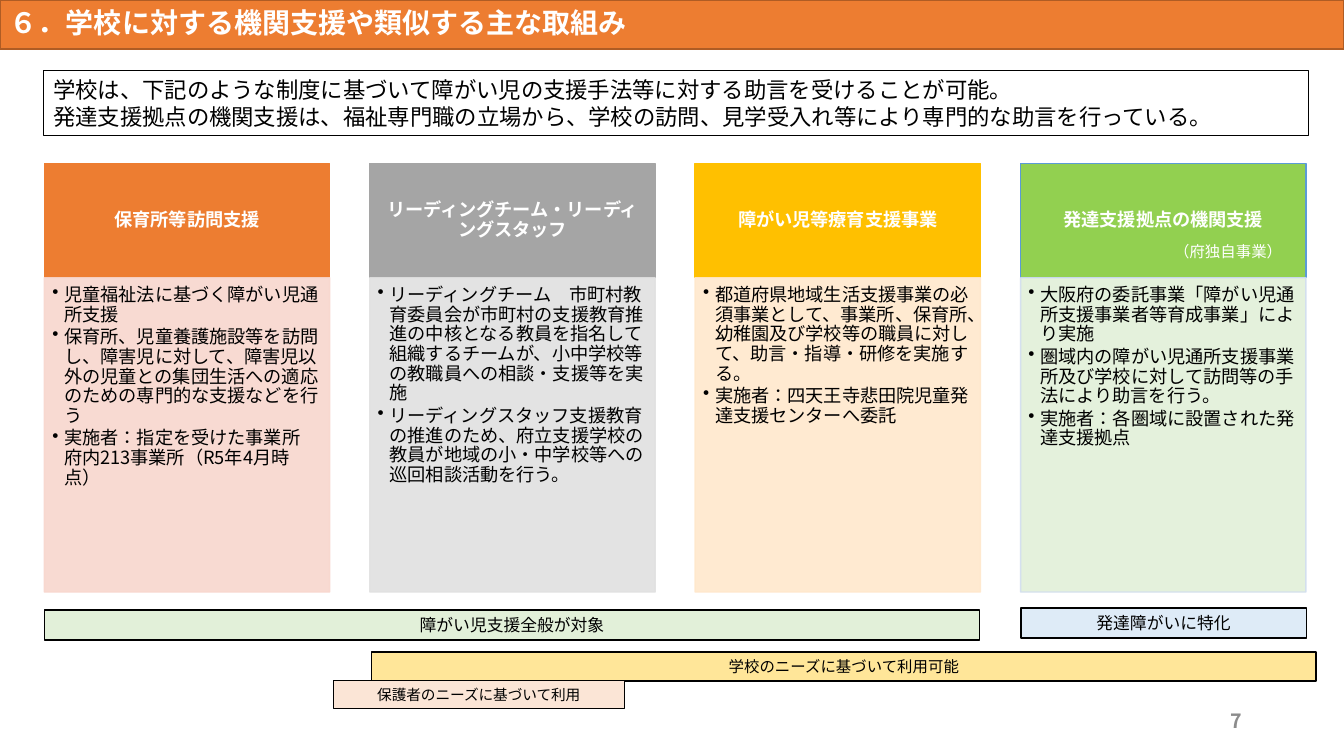
import pptx
import pptx.dml.color
import pptx.enum.shapes
import pptx.enum.text
import pptx.oxml
import pptx.oxml.ns
import pptx.util
from lxml import etree

Cm, Pt = pptx.util.Cm, pptx.util.Pt
RGB = pptx.dml.color.RGBColor.from_string
qn = pptx.oxml.ns.qn
ALIGN = pptx.enum.text.PP_ALIGN
ANCHOR = pptx.enum.text.MSO_ANCHOR

THEME = {
    "font": "Noto Sans CJK JP",
    "white": "FFFFFF", "black": "000000", "page": "8C8C8C",
    "title": ("ED7D31", "AF5C24"),
    "summary": ("FFFFFF", "000000"),
    "general": ("E2F0D9", "000000"),
    "special": ("DEEBF7", "000000"),
    "school": ("FFE699", "000000"),
    "parent": ("FBE5D6", "000000"),
    # header fill, header line, body fill, body line
    "columns": [("ED7D31", "ED7D31", "F8D7CE", "F8D7CE"),
                ("A5A5A5", "A5A5A5", "E1E1E1", "E1E1E1"),
                ("FFC000", "FFC000", "FFE8CC", "FFE8CC"),
                ("92D050", "5B9BD5", "E2F0D9", "D2DEEF")],
    "title_size": 20, "summary_size": 16, "page_size": 14,
    "column_size": 13, "band_size": 12, "small_size": 11, "parent_size": 10.5,
}

prs = pptx.Presentation()
prs.slide_width, prs.slide_height = Cm(33.87), Cm(19.05)
s = prs.slides.add_slide(prs.slide_layouts[6])


def add_box(at, lines, size, colors=None, ink="black", align=ALIGN.LEFT,
            anchor=ANCHOR.TOP, bold=False, spacing=None, space_after=None,
            insets=(0.25, 0.13, 0.25, 0.13), bullet=False, opacity=100):
    """Add a filled rectangle with text, or a text box when colors is None."""
    place = [Cm(v) for v in at]
    if colors:
        sp = s.shapes.add_shape(pptx.enum.shapes.MSO_SHAPE.RECTANGLE, *place)
        sp.shadow.inherit = False
        sp.line.width = Pt(1)
        for fill, color in zip((sp.fill, sp.line.fill), colors):
            fill.solid()
            fill.fore_color.rgb = RGB(color)
        if opacity < 100:
            for clr in sp.fill._xPr.iter(qn("a:srgbClr")):
                etree.SubElement(clr, qn("a:alpha")).set("val", str(opacity * 1000))
    else:
        sp = s.shapes.add_textbox(*place)
    tf = sp.text_frame
    tf.word_wrap = True
    tf.vertical_anchor = anchor
    for side, inset in zip(("left", "top", "right", "bottom"), insets):
        setattr(tf, f"margin_{side}", Cm(inset))
    for i, line in enumerate(lines):
        p = tf.add_paragraph() if i else tf.paragraphs[0]
        if bullet:
            pPr = p._p.get_or_add_pPr()
            pPr.set("marL", str(Cm(0.3)))
            pPr.set("indent", str(Cm(-0.3)))
            etree.SubElement(pPr, qn("a:buChar")).set("char", "•")
        formats = {"alignment": align, "line_spacing": spacing,
                   "space_after": space_after, "level": int(bullet)}
        for name, value in formats.items():
            setattr(p, name, value)
        r = p.add_run()
        r.text = line
        for name, value in {"name": THEME["font"], "size": Pt(size), "bold": bold}.items():
            setattr(r.font, name, value)
        r.font.color.rgb = RGB(THEME[ink])
        rPr = r._r.get_or_add_rPr()
        rPr.set("lang", "ja-JP")
        rPr.find(qn("a:latin")).addnext(
            rPr.makeelement(qn("a:ea"), {"typeface": THEME["font"]}))


add_box((23.93, 17.66, 7.62, 1.01), ["7"], THEME["page_size"], ink="page",
        align=ALIGN.RIGHT, anchor=ANCHOR.MIDDLE, bold=True)
add_box((0, 0, 33.87, 1.24), ["６．学校に対する機関支援や類似する主な取組み"], THEME["title_size"],
        THEME["title"], ink="white", anchor=ANCHOR.MIDDLE, bold=True, spacing=0.9)
add_box((1.09, 1.78, 31.88, 1.63),
        ["学校は、下記のような制度に基づいて障がい児の支援手法等に対する助言を受けることが可能。",
         "発達支援拠点の機関支援は、福祉専門職の立場から、学校の訪問、見学受入れ等により専門的な助言を行っている。"],
        THEME["summary_size"], THEME["summary"])

programs = [
    ("保育所等訪問支援",
     ["児童福祉法に基づく障がい児通所支援",
      "保育所、児童養護施設等を訪問し、障害児に対して、障害児以外の児童との集団生活への適応のための専門的な支援などを行う",
      "実施者：指定を受けた事業所　府内213事業所（R5年4月時点）"]),
    ("リーディングチーム・リーディングスタッフ",
     ["リーディングチーム　市町村教育委員会が市町村の支援教育推進の中核となる教員を指名して組織するチームが、小中学校等の教職員への相談・支援等を実施",
      "リーディングスタッフ支援教育の推進のため、府立支援学校の教員が地域の小・中学校等への巡回相談活動を行う。"]),
    ("障がい児等療育支援事業",
     ["都道府県地域生活支援事業の必須事業として、事業所、保育所、幼稚園及び学校等の職員に対して、助言・指導・研修を実施する。",
      "実施者：四天王寺悲田院児童発達支援センターへ委託"]),
    ("発達支援拠点の機関支援",
     ["大阪府の委託事業「障がい児通所支援事業者等育成事業」により実施",
      "圏域内の障がい児通所支援事業所及び学校に対して訪問等の手法により助言を行う。",
      "実施者：各圏域に設置された発達支援拠点"]),
]
LEFT, PITCH, WIDTH = 1.12, 8.2, 7.19
for i, ((heading, points), colors) in enumerate(zip(programs, THEME["columns"])):
    x = LEFT + i * PITCH
    add_box((x, 4.12, WIDTH, 2.88), [heading], THEME["column_size"], colors[:2],
            ink="white", align=ALIGN.CENTER, anchor=ANCHOR.MIDDLE, bold=True,
            spacing=0.9, insets=(0.25, 0.15, 0.25, 0.15))
    add_box((x, 7, WIDTH, 7.92), points, THEME["column_size"], colors[2:],
            spacing=0.9, space_after=Pt(2), insets=(0.2, 0.2, 0.25, 0.28),
            bullet=True, opacity=90)

add_box((29.34, 5.97, 3.61, 0.74), ["（府独自事業）"], THEME["small_size"], ink="white")

bands = [
    ((9.37, 16.43, 23.8, 0.73), "学校のニーズに基づいて利用可能", "small_size", "school"),
    ((25.73, 15.32, WIDTH, 0.76), "発達障がいに特化", "band_size", "special"),
    ((LEFT, 15.37, 23.57, 0.76), "障がい児支援全般が対象", "band_size", "general"),
    ((8.4, 17.15, 7.34, 0.71), "保護者のニーズに基づいて利用", "parent_size", "parent"),
]
for at, label, size, colors in bands:
    add_box(at, [label], THEME[size], THEME[colors], align=ALIGN.CENTER)

prs.save("out.pptx")
